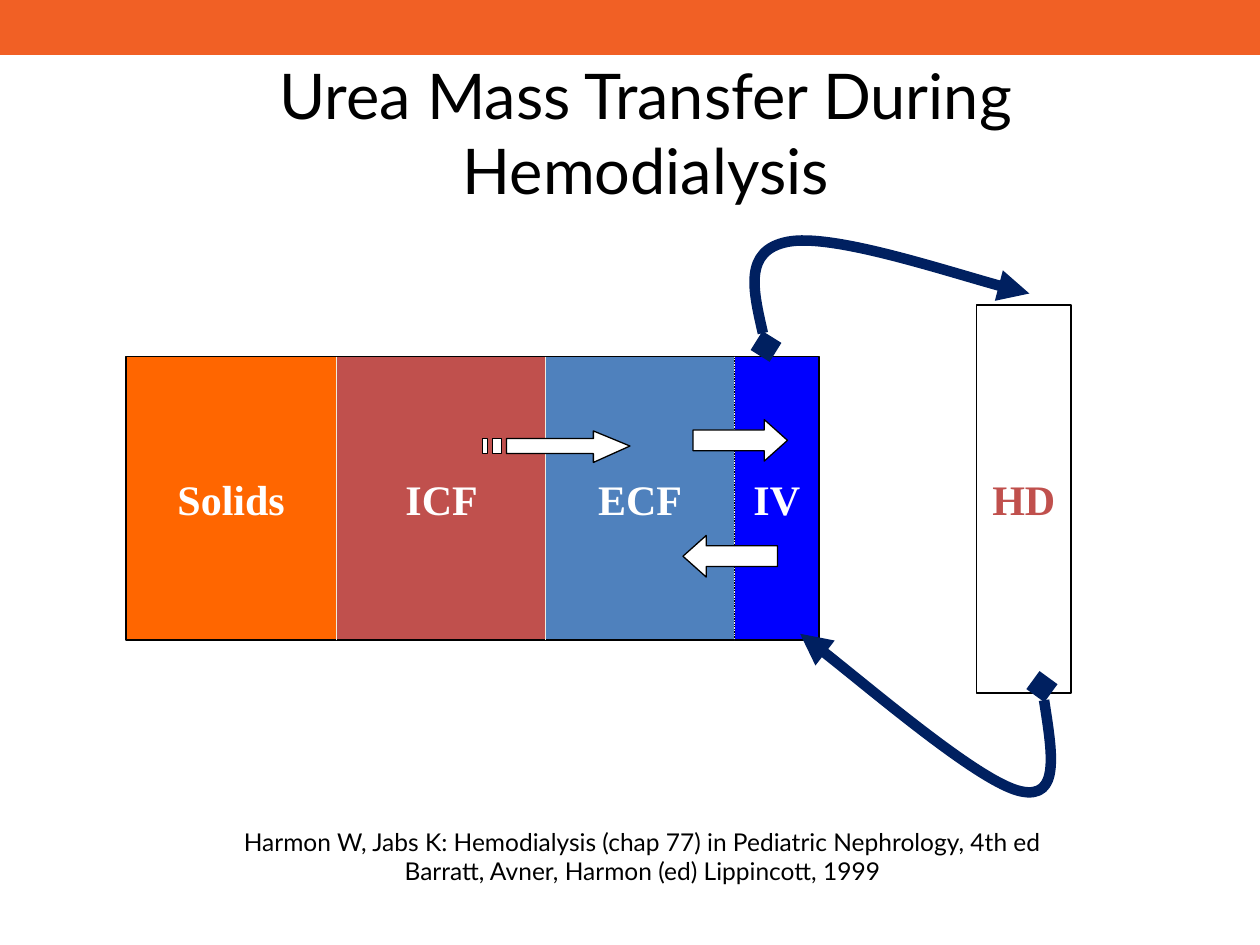
from lxml import etree
from pptx import Presentation
from pptx.dml.color import RGBColor
from pptx.enum.dml import MSO_LINE
from pptx.enum.shapes import MSO_CONNECTOR, MSO_SHAPE
from pptx.enum.text import MSO_ANCHOR, PP_ALIGN
from pptx.oxml.ns import qn
from pptx.util import Inches, Pt

RECTANGLE, LEFT_ARROW = MSO_SHAPE.RECTANGLE, MSO_SHAPE.LEFT_ARROW
STRAIGHT, DOTTED = MSO_CONNECTOR.STRAIGHT, MSO_LINE.ROUND_DOT
MIDDLE, CENTER = MSO_ANCHOR.MIDDLE, PP_ALIGN.CENTER

COLORS = {name: RGBColor.from_string(value) for name, value in {
    "banner": "F16025", "solids": "FF6600", "red": "C0504D", "ecf": "4F81BD",
    "iv": "0000FF", "divider": "EEECE1", "tubing": "002060",
    "black": "000000", "white": "FFFFFF",
}.items()}


def paint(shape, fill, line="black", width=0.75):
    """Set fill (None for no fill) and outline, without a shadow."""
    shape.shadow.inherit = False
    if fill:
        shape.fill.solid()
        shape.fill.fore_color.rgb = COLORS[fill]
    else:
        shape.fill.background()
    shape.line.color.rgb = COLORS[line]
    shape.line.width = Pt(width)


def write(shape, lines, font, size, color, bold=False, wrap=False):
    """Write centred lines of text, one paragraph each."""
    frame = shape.text_frame
    frame.word_wrap = wrap
    frame.vertical_anchor = MIDDLE
    for index, line in enumerate(lines):
        para = frame.add_paragraph() if index else frame.paragraphs[0]
        para.alignment = CENTER
        span = para.add_run()
        span.text = line
        span.font.name = font
        span.font.size = Pt(size)
        span.font.bold = bold
        span.font.color.rgb = COLORS[color]


deck = Presentation()
deck.slide_width, deck.slide_height = Inches(10), Inches(7.5)
page = deck.slides.add_slide(deck.slide_layouts[6])
shapes = page.shapes

banner = shapes.add_shape(RECTANGLE, 0, 0, Inches(10), Inches(0.42))
paint(banner, "banner", "banner", 2)

title = shapes.add_textbox(Inches(0.75), Inches(0.42), Inches(8.75), Inches(1.25))
write(title, ["Urea Mass Transfer During Hemodialysis"], "Lato", 36, "black", wrap=True)
frame = title.text_frame
frame.margin_left = frame.margin_right = frame.margin_top = frame.margin_bottom = 0

# Body compartments and the dialyzer
BODY_TOP, BODY_HEIGHT = 2.83, 2.25
compartments = [
    ("Solids", 1, BODY_TOP, 1.67, BODY_HEIGHT, "solids", "white"),
    ("ICF", 2.67, BODY_TOP, 1.67, BODY_HEIGHT, "red", "white"),
    ("ECF", 4.33, BODY_TOP, 1.5, BODY_HEIGHT, "ecf", "white"),
    ("IV", 5.83, BODY_TOP, 0.67, BODY_HEIGHT, "iv", "white"),
    ("HD", 7.75, 2.42, 0.75, 3.08, "white", "red"),
]
for label, left, top, width, height, fill, color in compartments:
    box = shapes.add_shape(RECTANGLE, Inches(left), Inches(top), Inches(width), Inches(height))
    paint(box, fill)
    write(box, [label], "Times New Roman", 24, color, bold=True)

for x, dash in [(2.67, None), (4.33, None), (5.83, DOTTED)]:
    divider = shapes.add_connector(STRAIGHT, Inches(x), Inches(BODY_TOP),
                                   Inches(x), Inches(BODY_TOP + BODY_HEIGHT))
    divider.line.color.rgb = COLORS["divider"]
    divider.line.width = Pt(0.75)
    if dash:
        divider.line.dash_style = dash
    etree.SubElement(divider._element.spPr, qn("a:effectLst"))

# Blood lines: a start point, then three points for each Bézier curve
blood_lines = [
    [(8.27, 5.45), (8.34, 5.9), (8.42, 6.35), (8.1, 6.28),
     (7.78, 6.21), (6.64, 5.24), (6.35, 5.03)],
    [(6.08, 2.75), (5.99, 2.37), (5.9, 1.99), (6.25, 1.92),
     (6.6, 1.85), (7.85, 2.26), (8.17, 2.33)],
]
for points in blood_lines:
    start, *rest = [(Inches(x), Inches(y)) for x, y in points]
    builder = shapes.build_freeform(*start)
    builder.add_line_segments(rest, close=False)
    tube = builder.convert_to_shape()
    paint(tube, None, "tubing", 6)
    segments = list(tube._element.iter(qn("a:lnTo")))
    for first in range(0, len(segments), 3):
        curve, *others = segments[first:first + 3]
        curve.tag = qn("a:cubicBezTo")
        for segment in others:
            curve.append(segment[0])
            segment.getparent().remove(segment)
    outline = tube._element.spPr.find(qn("a:ln"))
    etree.SubElement(outline, qn("a:headEnd"), type="diamond")
    etree.SubElement(outline, qn("a:tailEnd"), type="triangle")

citation = shapes.add_textbox(Inches(1.8), Inches(6.51), Inches(6.6), Inches(0.57))
write(citation, ["Harmon W, Jabs K: Hemodialysis (chap 77) in Pediatric Nephrology, 4th ed",
                 "Barratt, Avner, Harmon (ed) Lippincott, 1999"], "Lato", 14, "black")

# Exchange between ECF and IV
for left, top, rotation in [(5.42, 4.25, 0), (5.5, 3.33, 180)]:
    arrow = shapes.add_shape(LEFT_ARROW, Inches(left), Inches(top), Inches(0.75), Inches(0.33))
    arrow.adjustments[0], arrow.adjustments[1] = 0.5, 0.56
    arrow.rotation = rotation
    paint(arrow, "white")

# Striped arrow from ICF to ECF: the head and shaft, then two stripes
SHAFT_TOP, SHAFT_BOTTOM = 3.48, 3.6
contours = [[(4.71, 3.42), (4.71, SHAFT_TOP), (4.02, SHAFT_TOP), (4.02, SHAFT_BOTTOM),
             (4.71, SHAFT_BOTTOM), (4.71, 3.67), (5, 3.54)]]
for left, right in [(3.91, 3.98), (3.83, 3.87)]:
    contours.append([(left, SHAFT_TOP), (left, SHAFT_BOTTOM),
                     (right, SHAFT_BOTTOM), (right, SHAFT_TOP)])
builder = None
for contour in contours:
    start, *rest = [(Inches(x), Inches(y)) for x, y in contour]
    if builder is None:
        builder = shapes.build_freeform(*start)
    else:
        builder.move_to(*start)
    builder.add_line_segments(rest, close=True)
paint(builder.convert_to_shape(), "white")

deck.save("out.pptx")
